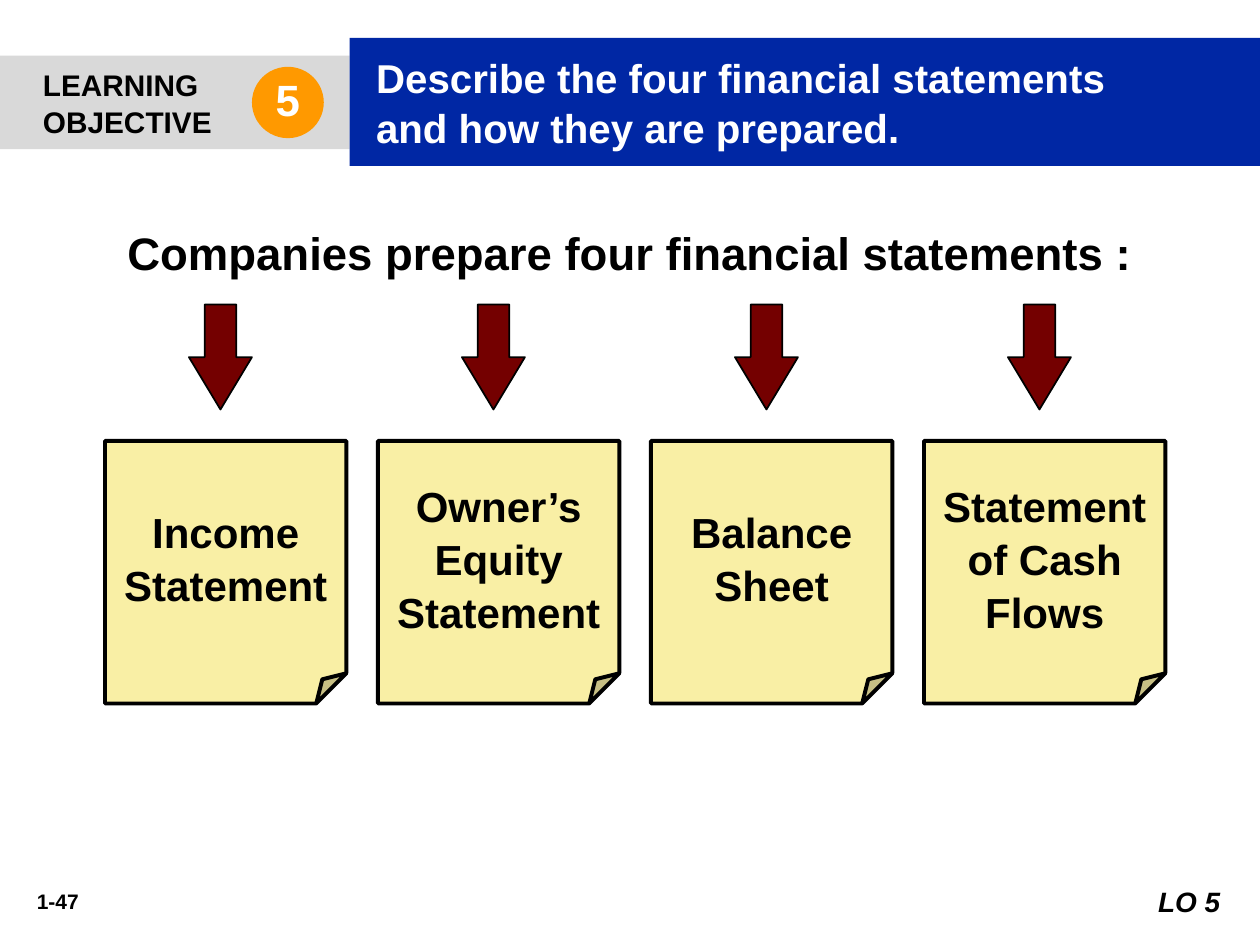
"""Build a slide that names the four financial statements."""
from dataclasses import dataclass

from lxml.etree import SubElement as Sub
from pptx import Presentation
from pptx.dml.color import RGBColor as Rgb
from pptx.enum.shapes import MSO_SHAPE as Kind
from pptx.enum.text import MSO_ANCHOR as Anchor, PP_ALIGN as Align
from pptx.oxml.ns import qn
from pptx.util import Inches, Pt

INK = {
    "black": "000000", "white": "FFFFFF", "gray": "D9D9D9", "blue": "0027A4",
    "gold": "FF9900", "red": "740000", "note": "F9EFA5",
}
COLS, ROWS = 120, 90
STEP = 26
NAMES = ("Income Statement", "Owner’s Equity Statement", "Balance Sheet",
         "Statement of Cash Flows")


@dataclass(frozen=True)
class Box:
    """A place on the grid, in columns and rows."""
    col: float
    row: float
    wide: float
    high: float

    def shift(self, cols: float) -> "Box":
        """Return the same box moved to the right."""
        return Box(self.col + cols, self.row, self.wide, self.high)


@dataclass(frozen=True)
class Type:
    """The look of a block of text."""
    size: float
    ink: str = "black"
    align: Align = Align.CENTER
    italic: bool = False
    left: float = 0.1
    right: float = 0.1
    top: float = 0.05
    lead: float = 1.05


def place(deck, box: Box) -> tuple:
    """Turn a grid box into slide lengths."""
    col, row = deck.slide_width / COLS, deck.slide_height / ROWS
    return (round(box.col * col), round(box.row * row),
            round(box.wide * col), round(box.high * row))


def write(shape, text: str, look: Type) -> None:
    """Fill a shape with text, one paragraph a line."""
    frame = shape.text_frame
    frame.text = text
    frame.word_wrap = True
    frame.vertical_anchor = Anchor.MIDDLE
    frame.margin_left, frame.margin_right = Inches(look.left), Inches(look.right)
    frame.margin_top, frame.margin_bottom = Inches(look.top), Inches(0.05)
    for para in frame.paragraphs:
        para.alignment = look.align
        para.line_spacing = look.lead
        font = para.font
        font.name, font.size = "Arial", Pt(look.size)
        font.bold, font.italic = True, look.italic
        font.color.rgb = Rgb.from_string(INK[look.ink])


def label(deck, slide, box: Box, text: str, look: Type) -> None:
    """Add a text box."""
    write(slide.shapes.add_textbox(*place(deck, box)), text, look)


def draw(deck, slide, kind: Kind, box: Box, fill: str, line: float = 0):
    """Add a filled shape, outlined in black if a line width is given."""
    shape = slide.shapes.add_shape(kind, *place(deck, box))
    shape.shadow.inherit = False
    shape.fill.solid()
    shape.fill.fore_color.rgb = Rgb.from_string(INK[fill])
    if line:
        shape.line.width = Pt(line)
        shape.line.color.rgb = Rgb.from_string(INK["black"])
    else:
        shape.line.fill.background()
    return shape


def fold(shape, share: float) -> None:
    """Set the size of a note's folded corner."""
    guides = next(shape.element.iter(qn("a:avLst")))
    Sub(guides, qn("a:gd"), name="adj", fmla=f"val {round(share * 100000)}")


def banner(deck, slide) -> None:
    """Draw the objective strip, its title and its number."""
    strip = draw(deck, slide, Kind.RECTANGLE, Box(0, 5.3, 33.3, 8.9), "gray")
    write(strip, "LEARNING\nOBJECTIVE", Type(17, align=Align.LEFT, left=0.34))
    title = draw(deck, slide, Kind.RECTANGLE, Box(33.3, 3.6, 86.7, 12.2), "blue")
    write(title, "Describe the four financial statements\nand how they are prepared.",
          Type(23, "white", Align.LEFT, left=0.21, top=0.04))
    badge = draw(deck, slide, Kind.OVAL, Box(24, 6.36, 6.84, 6.8), "gold")
    write(badge, "5", Type(25, "white", top=0, lead=1))


def main() -> None:
    """Build and save the deck."""
    deck = Presentation()
    deck.slide_width, deck.slide_height = Inches(10), Inches(7.5)
    slide = deck.slides.add_slide(deck.slide_layouts[6])
    banner(deck, slide)
    label(deck, slide, Box(9, 20.7, 102, 6.4),
          "Companies prepare four financial statements :", Type(26))
    for spot, name in enumerate(NAMES):
        move = spot * STEP
        arrow = draw(deck, slide, Kind.DOWN_ARROW,
                     Box(18, 29, 6, 10).shift(move), "red", 1)
        arrow.adjustments[1] = 0.83
        note = draw(deck, slide, Kind.FOLDED_CORNER,
                    Box(10, 42, 23, 25).shift(move), "note", 2.25)
        fold(note, 0.125)
        write(note, name, Type(24))
    label(deck, slide, Box(1, 84, 9, 3.6), "1-47", Type(12))
    label(deck, slide, Box(108, 83.6, 10, 4.4), "LO 5",
          Type(16, align=Align.RIGHT, italic=True, right=0.15))
    deck.save("out.pptx")


if __name__ == "__main__":
    main()
